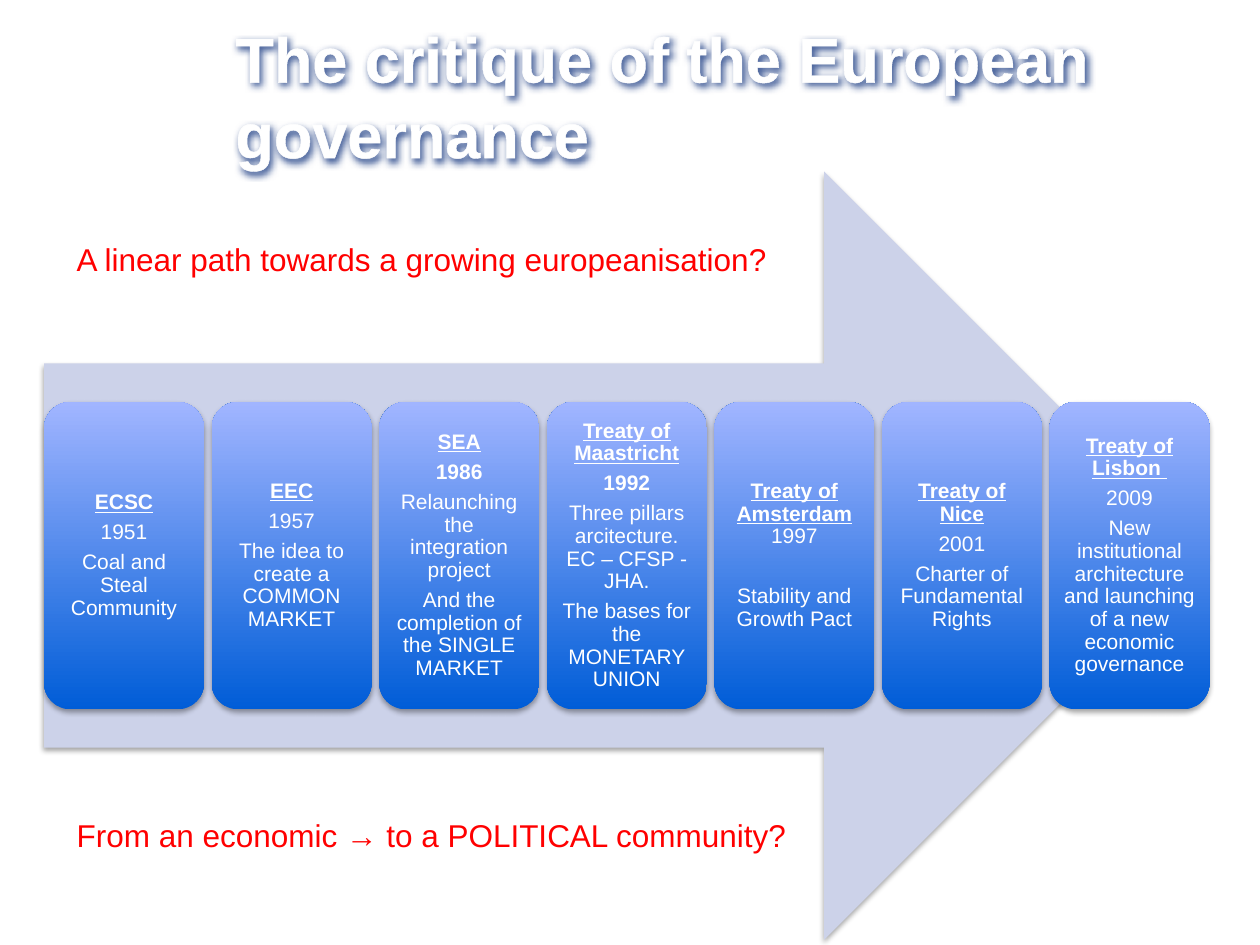
import pptx
import pptx.util
import pptx.dml.color
import pptx.enum.shapes
import pptx.enum.text
import pptx.oxml
from pptx.util import Inches

RGBColor = pptx.dml.color.RGBColor
SHAPE = pptx.enum.shapes.MSO_SHAPE
ANCHOR = pptx.enum.text.MSO_ANCHOR
ALIGN = pptx.enum.text.PP_ALIGN

WHITE = RGBColor(0xFF, 0xFF, 0xFF)
OUTLINE = RGBColor(0xFE, 0xFE, 0xFE)
RED = RGBColor(0xFF, 0x00, 0x00)
BLACK = RGBColor(0x00, 0x00, 0x00)
NAVY = RGBColor(0x1F, 0x3F, 0x85)
PALE_BLUE = RGBColor(0xCC, 0xD2, 0xE9)
DEEP_BLUE = RGBColor(0x00, 0x5D, 0xD7)
LIGHT_BLUE = RGBColor(0xA1, 0xB5, 0xFF)

TITLE = "The critique of the European governance"
QUESTIONS = [
    ("A linear path towards a growing europeanisation?", 1.86, True),
    ("From an economic → to a POLITICAL community?", 6.43, False),
]
HEAD = {"bold": True, "underline": True}
BOLD = {"bold": True}
PLAIN = {}
GAP, WIDE_GAP = 4.2, 21.4
TREATIES = [
    [([("ECSC", HEAD)], GAP), ([("1951", PLAIN)], GAP),
     ([("Coal and Steal Community", PLAIN)], GAP)],
    [([("EEC", HEAD)], GAP), ([("1957", PLAIN)], GAP),
     ([("The idea to create a COMMON MARKET", PLAIN)], GAP)],
    [([("SEA", HEAD)], GAP), ([("1986", BOLD)], GAP),
     ([("Relaunching the integration project", PLAIN)], GAP),
     ([("And the completion of the SINGLE MARKET", PLAIN)], GAP)],
    [([("Treaty of Maastricht", HEAD)], GAP), ([("1992", BOLD)], GAP),
     ([("Three pillars arcitecture. EC – CFSP - JHA.", PLAIN)], GAP),
     ([("The bases for the MONETARY UNION", PLAIN)], GAP)],
    [([("Treaty of Amsterdam ", HEAD), ("1997", PLAIN)], WIDE_GAP),
     ([("Stability and Growth Pact", PLAIN)], GAP)],
    [([("Treaty of Nice", HEAD)], GAP), ([("2001", PLAIN)], GAP),
     ([("Charter of Fundamental Rights", PLAIN)], GAP)],
    [([("Treaty of Lisbon ", HEAD)], GAP), ([("2009", PLAIN)], GAP),
     ([("New institutional architecture and launching of a new "
        "economic governance", PLAIN)], WIDE_GAP)],
]
LEFT, TOP, CARD_W, CARD_H, PITCH = 0.35, 3.19, 1.27, 2.44, 1.33
NS = 'xmlns:a="http://schemas.openxmlformats.org/drawingml/2006/main"'


def set_all(obj, **values):
    for name, value in values.items():
        setattr(obj, name, value)


def add_run(p, text, size, color, **style):
    r = p.add_run()
    r.text = text
    set_all(r.font, name="Arial", size=pptx.util.Pt(size), **style)
    r.font.color.rgb = color
    return r


def add_shadow(sp, color, alpha, blur, dist, angle):
    sp.shadow.inherit = False
    effects = sp._element.spPr.find(pptx.oxml.ns.qn("a:effectLst"))
    effects.append(pptx.oxml.parse_xml(
        f'<a:outerShdw {NS} blurRad="{pptx.util.Pt(blur)}" '
        f'dist="{pptx.util.Pt(dist)}" dir="{angle * 60000}" rotWithShape="0">'
        f'<a:srgbClr val="{color}"><a:alpha val="{alpha * 1000}"/></a:srgbClr>'
        '</a:outerShdw>'))


def add_box(s, kind, x, y, w, h):
    sp = s.shapes.add_shape(kind, Inches(x), Inches(y), Inches(w), Inches(h))
    sp.line.fill.background()
    add_shadow(sp, BLACK, 35, 3.1, 1.8, 90)
    return sp


def add_text(s, text, x, y, w, h, size, color, wrap=True, **style):
    sp = s.shapes.add_textbox(Inches(x), Inches(y), Inches(w), Inches(h))
    sp.text_frame.word_wrap = wrap
    r = add_run(sp.text_frame.paragraphs[0], text, size, color, **style)
    return sp, r


def add_card(s, index, paragraphs):
    sp = add_box(s, SHAPE.ROUNDED_RECTANGLE, LEFT + index * PITCH, TOP, CARD_W, CARD_H)
    sp.fill.gradient()
    sp.fill.gradient_angle = 90
    for stop, color in zip(sp.fill.gradient_stops, (DEEP_BLUE, LIGHT_BLUE)):
        stop.color.rgb = color
    tf = sp.text_frame
    inset = Inches(0.05)
    set_all(tf, word_wrap=True, vertical_anchor=ANCHOR.MIDDLE, margin_left=inset,
            margin_right=inset, margin_top=inset, margin_bottom=inset)
    for i, (runs, gap) in enumerate(paragraphs):
        p = tf.add_paragraph() if i else tf.paragraphs[0]
        set_all(p, alignment=ALIGN.CENTER, line_spacing=0.9,
                space_after=pptx.util.Pt(gap))
        for text, style in runs:
            add_run(p, text, 12, WHITE, **style)


def main():
    prs = pptx.Presentation()
    set_all(prs, slide_width=Inches(10), slide_height=Inches(7.5))
    s = prs.slides.add_slide(prs.slide_layouts[6])

    title, r = add_text(s, TITLE, 1.77, 0.36, 7.72, 0.79, 36, WHITE, bold=True)
    title.text_frame.vertical_anchor = ANCHOR.MIDDLE
    add_shadow(title, NAVY, 80, 4, 2, 50)
    r.font._element.insert(0, pptx.oxml.parse_xml(
        f'<a:ln {NS} w="{pptx.util.Pt(1.5)}"><a:solidFill>'
        f'<a:srgbClr val="{OUTLINE}"/></a:solidFill></a:ln>'))

    arrow = add_box(s, SHAPE.RIGHT_ARROW, LEFT, 1.36, 9.24, 6.1)
    arrow.fill.solid()
    arrow.fill.fore_color.rgb = PALE_BLUE

    for index, paragraphs in enumerate(TREATIES):
        add_card(s, index, paragraphs)
    for text, y, wrap in QUESTIONS:
        add_text(s, text, 0.51, y, 5.98, 0.4, 18, RED, wrap)

    prs.save("out.pptx")


if __name__ == "__main__":
    main()
